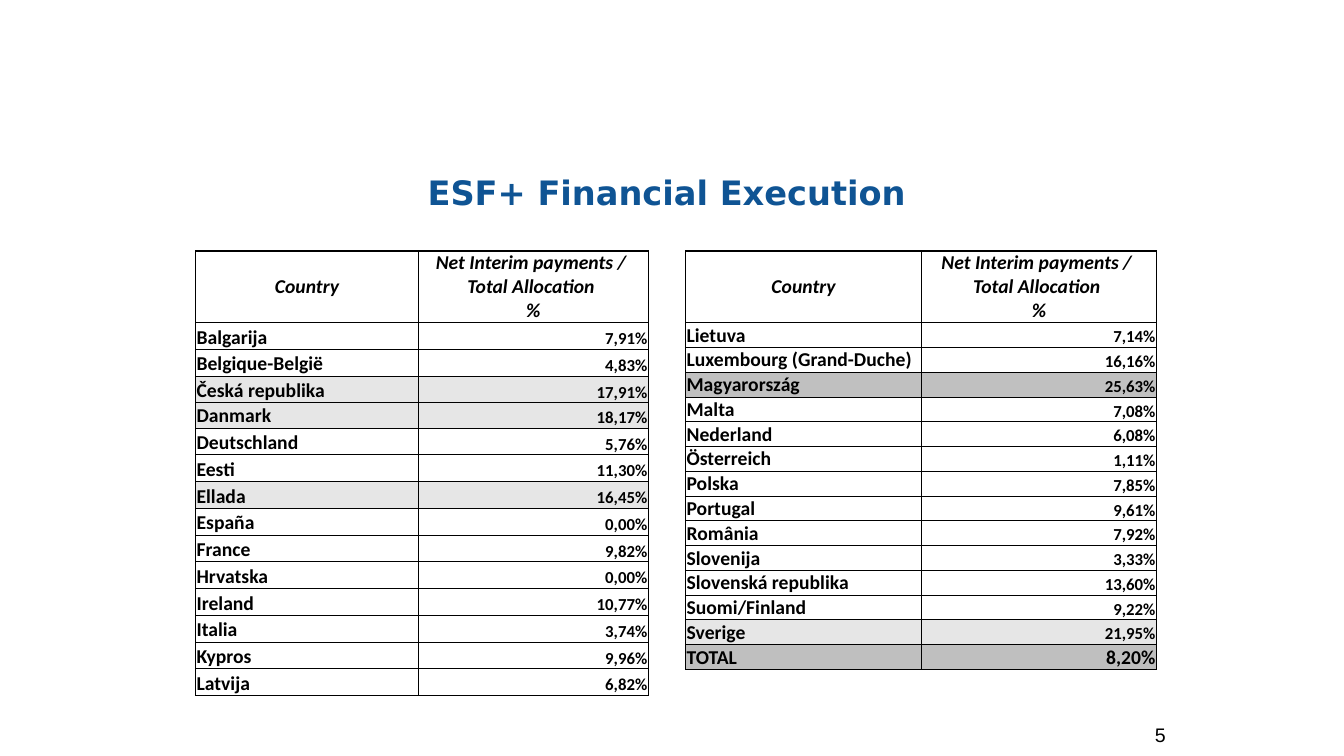
from pptx import Presentation
from pptx.dml.color import RGBColor
from pptx.enum.text import MSO_ANCHOR, MSO_AUTO_SIZE, PP_ALIGN
from pptx.oxml import parse_xml
from pptx.oxml.ns import nsdecls
from pptx.util import Inches, Pt

INK = {"title": "0F5494", "text": "000000", "line": "000000",
       "light": "E6E6E6", "dark": "C0C0C0", "total": "BFBFBF"}

HEAD = ["Net Interim payments / ", "Total Allocation ", "%"]
HEAD_H = 0.71
LOW_H = 0.25

# Country, share paid, optional shade
LEFT = [
    ("Balgarija", "7,91%", None), ("Belgique-België", "4,83%", None),
    ("Česká republika", "17,91%", "light"), ("Danmark", "18,17%", "light"),
    ("Deutschland", "5,76%", None), ("Eesti", "11,30%", None),
    ("Ellada", "16,45%", "light"), ("España", "0,00%", None),
    ("France", "9,82%", None), ("Hrvatska", "0,00%", None),
    ("Ireland", "10,77%", None), ("Italia", "3,74%", None),
    ("Kypros", "9,96%", None), ("Latvija", "6,82%", None),
]
RIGHT = [
    ("Lietuva", "7,14%", None), ("Luxembourg (Grand-Duche)", "16,16%", None),
    ("Magyarország", "25,63%", "dark"), ("Malta", "7,08%", None),
    ("Nederland", "6,08%", None), ("Österreich", "1,11%", None),
    ("Polska", "7,85%", None), ("Portugal", "9,61%", None),
    ("România", "7,92%", None), ("Slovenija", "3,33%", None),
    ("Slovenská republika", "13,60%", None), ("Suomi/Finland", "9,22%", None),
    ("Sverige", "21,95%", "light"), ("TOTAL", "8,20%", "total"),
]


def add_run(para, text, size, face, ink="text", bold=False, slant=False):
    run = para.add_run()
    run.text = text
    font = run.font
    font.size, font.name = Pt(size), face
    font.bold, font.italic = bold, slant
    font.color.rgb = RGBColor.from_string(INK[ink])


def add_edges(cell, widths):
    """Draw the left, right, top and bottom edges, widths in points."""
    for side, width in zip("LRTB", widths):
        cell._tc.get_or_add_tcPr().append(parse_xml(
            f'<a:ln{side} {nsdecls("a")} w="{Pt(width)}"><a:solidFill>'
            f'<a:srgbClr val="{INK["line"]}"/></a:solidFill></a:ln{side}>'))


def fill_cell(cell, lines, size, align, shade=None, head=False):
    pad = Inches(0 if head else 0.01)
    cell.margin_left = cell.margin_right = cell.margin_top = pad
    cell.margin_bottom = 0
    cell.vertical_anchor = MSO_ANCHOR.MIDDLE if head else MSO_ANCHOR.BOTTOM
    add_edges(cell, (0.5, 0.5, 1 if head else 0.5, 0.5))
    if shade:
        cell.fill.solid()
        cell.fill.fore_color.rgb = RGBColor.from_string(INK[shade])
    else:
        cell.fill.background()
    para = cell.text_frame.paragraphs[0]
    para.alignment = align
    for i, line in enumerate(lines):
        if i:
            para.add_line_break()
        add_run(para, line, size, "Calibri", bold=True, slant=head)


def add_title(slide, box):
    title = slide.shapes.title
    title.left, title.top, title.width, title.height = map(Inches, box)
    frame = title.text_frame
    frame.auto_size = MSO_AUTO_SIZE.NONE
    frame.vertical_anchor = MSO_ANCHOR.TOP
    para = frame.paragraphs[0]
    para.alignment = PP_ALIGN.CENTER
    add_run(para, "ESF+ Financial Execution ", 24, "DejaVu Sans", "title", True)


def add_grid(slide, box, split, data, low=()):
    """Fill the box with a table; rows named in low keep a lower height."""
    x, y, w, h = box
    table = slide.shapes.add_table(len(data) + 1, 2, *map(Inches, box)).table
    table.first_row = table.horz_banding = False
    table.columns[0].width = Inches(split)
    table.columns[1].width = Inches(w - split)

    # Header row
    table.rows[0].height = Inches(HEAD_H)
    for col, lines in enumerate((["Country"], HEAD)):
        fill_cell(table.cell(0, col), lines, 14, PP_ALIGN.CENTER, head=True)

    # Country rows share the height that is left
    step = (h - HEAD_H - LOW_H * len(low)) / (len(data) - len(low))
    for row, (name, share, shade) in enumerate(data, 1):
        table.rows[row].height = Inches(LOW_H if name in low else step)
        fill_cell(table.cell(row, 0), [name], 14, PP_ALIGN.LEFT, shade)
        size = 14 if shade == "total" else 12
        fill_cell(table.cell(row, 1), [share], size, PP_ALIGN.RIGHT, shade)


def add_page(slide, box, text):
    frame = slide.shapes.add_textbox(*map(Inches, box)).text_frame
    frame.word_wrap = True
    para = frame.paragraphs[0]
    para.alignment = PP_ALIGN.RIGHT
    add_run(para, text, 14, "Arial")


def main():
    deck = Presentation()
    deck.slide_width, deck.slide_height = Inches(13.33), Inches(7.5)
    slide = deck.slides.add_slide(deck.slide_layouts[5])
    add_title(slide, (2.17, 1.66, 9, 0.71))
    add_page(slide, (9.33, 7.12, 2.33, 0.52), "5")
    add_grid(slide, (1.94, 2.49, 4.49, 4.41), 2.21, LEFT, ("Danmark",))
    add_grid(slide, (6.8, 2.49, 4.67, 4.15), 2.34, RIGHT)
    deck.save("out.pptx")


if __name__ == "__main__":
    main()
